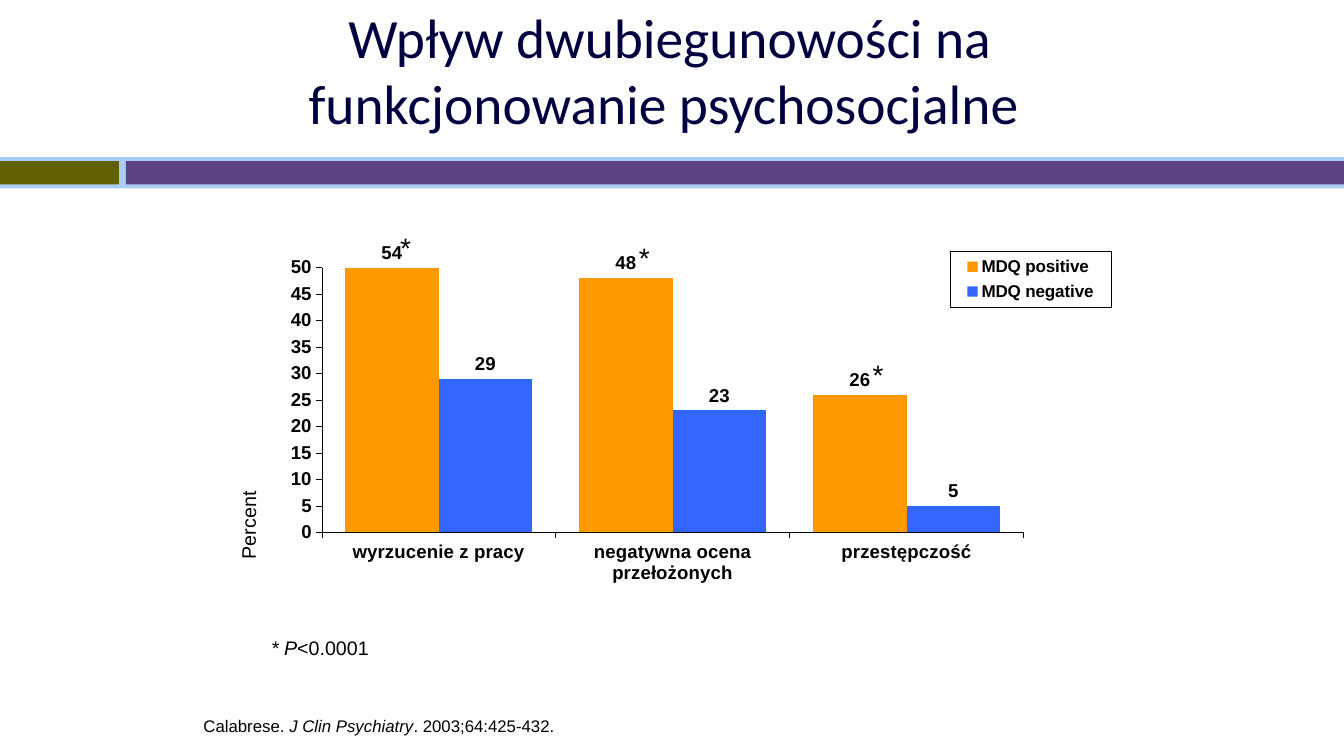
from typing import NamedTuple

from pptx import Presentation
from pptx.chart.data import CategoryChartData
from pptx.dml.color import RGBColor
from pptx.enum.chart import XL_CHART_TYPE as ChartType
from pptx.enum.chart import XL_LABEL_POSITION as LabelPosition
from pptx.enum.chart import XL_LEGEND_POSITION as LegendPosition
from pptx.enum.chart import XL_TICK_MARK as TickMark
from pptx.enum.shapes import MSO_SHAPE as Shape
from pptx.enum.text import MSO_ANCHOR as Anchor
from pptx.enum.text import PP_ALIGN as Align
from pptx.oxml import parse_xml
from pptx.oxml.ns import nsdecls
from pptx.util import Inches, Pt

COLUMNS, ROWS = 160, 90
CELL = Inches(1 / 12)

BLACK = RGBColor(0x00, 0x00, 0x00)
NAVY = RGBColor(0x00, 0x00, 0x40)
PALE_BLUE = RGBColor(0xAB, 0xCD, 0xF4)
OLIVE = RGBColor(0x60, 0x60, 0x00)
PURPLE = RGBColor(0x5C, 0x43, 0x81)
ORANGE = RGBColor(0xFF, 0x99, 0x00)
BLUE = RGBColor(0x33, 0x66, 0xFF)


class Box(NamedTuple):
    """A place on the slide, in grid columns and rows."""
    column: float
    row: float
    columns: float
    rows: float

    def emu(self) -> list[int]:
        return [round(cells * CELL) for cells in self]


class Band(NamedTuple):
    box: Box
    color: RGBColor


class Run(NamedTuple):
    text: str
    italic: bool = False


class Group(NamedTuple):
    name: str
    values: tuple[int, ...]
    color: RGBColor


BANDS = (
    Band(Box(0, 18.72, COLUMNS, 3.72), PALE_BLUE),
    Band(Box(0, 19.2, 14.16, 2.76), OLIVE),
    Band(Box(15, 19.2, COLUMNS - 15, 2.76), PURPLE),
)
OUTCOMES = ("wyrzucenie z pracy", "negatywna ocena przełożonych", "przestępczość")
GROUPS = (
    Group("MDQ positive", (54, 48, 26), ORANGE),
    Group("MDQ negative", (29, 23, 5), BLUE),
)
STAR_CORNERS = ((46.44, 26.88), (74.88, 28.08), (102.72, 42))


def add_band(slide, band: Band) -> None:
    bar = slide.shapes.add_shape(Shape.RECTANGLE, *band.box.emu())
    bar.shadow.inherit = False
    bar.fill.solid()
    bar.fill.fore_color.rgb = band.color
    bar.line.fill.background()


def add_text(slide, box: Box, *runs: Run, size: float = 14, font: str = "Arial",
             color: RGBColor = BLACK, align: Align = Align.LEFT,
             anchor: Anchor = Anchor.TOP, rotation: float = 0) -> None:
    holder = slide.shapes.add_textbox(*box.emu())
    holder.rotation = rotation
    frame = holder.text_frame
    frame.word_wrap = True
    frame.vertical_anchor = anchor
    paragraph = frame.paragraphs[0]
    paragraph.alignment = align
    for part in runs:
        run = paragraph.add_run()
        run.text = part.text
        run.font.italic = part.italic
        style_font(run.font, size, font, color)


def style_font(font, size: float, name: str = "Arial",
               color: RGBColor = BLACK, bold: bool = False) -> None:
    font.size = Pt(size)
    font.name = name
    font.bold = bold
    font.color.rgb = color


def manual_layout(x: float, y: float, w: float, h: float, inner: bool = False):
    """Chart layout element, in shares of the chart's size."""
    target = '<c:layoutTarget val="inner"/>' if inner else ""
    return parse_xml(
        f'<c:layout {nsdecls("c")}><c:manualLayout>{target}'
        '<c:xMode val="edge"/><c:yMode val="edge"/>'
        f'<c:x val="{x}"/><c:y val="{y}"/><c:w val="{w}"/><c:h val="{h}"/>'
        '</c:manualLayout></c:layout>')


def style_axis(axis) -> None:
    axis.has_major_gridlines = False
    axis.major_tick_mark = TickMark.OUTSIDE
    axis.minor_tick_mark = TickMark.NONE
    axis.format.line.color.rgb = BLACK
    axis.format.line.width = Pt(0.25)
    style_font(axis.tick_labels.font, 13.3, bold=True)


def place_chart_parts(chart) -> None:
    """Fix the plot area and legend, and frame the legend."""
    for empty in chart.element.xpath("//c:plotArea/c:layout | //c:legend/c:layout"):
        empty.getparent().remove(empty)
    plot_area, = chart.element.xpath("//c:plotArea")
    plot_area.insert(0, manual_layout(0.058, 0.073, 0.805, 0.63, inner=True))
    legend_side, = chart.element.xpath("//c:legend/c:legendPos")
    legend_side.addnext(manual_layout(0.779, 0.034, 0.184, 0.133))
    legend_text, = chart.element.xpath("//c:legend/c:txPr")
    legend_text.addprevious(parse_xml(
        f'<c:spPr {nsdecls("c", "a")}><a:noFill/><a:ln w="3175"><a:solidFill>'
        f'<a:srgbClr val="{BLACK}"/></a:solidFill></a:ln></c:spPr>'))


def add_outcome_chart(slide, box: Box) -> None:
    data = CategoryChartData()
    data.categories = OUTCOMES
    for group in GROUPS:
        data.add_series(group.name, group.values)
    chart = slide.shapes.add_chart(ChartType.COLUMN_CLUSTERED, *box.emu(), data).chart
    chart.has_title = False
    style_font(chart.font, 17.1, "Times New Roman", bold=True)

    style_axis(chart.category_axis)
    style_axis(chart.value_axis)
    chart.value_axis.minimum_scale = 0
    chart.value_axis.maximum_scale = 50
    chart.value_axis.major_unit = 5

    plot = chart.plots[0]
    plot.gap_width = 50
    plot.overlap = 0
    plot.vary_by_categories = False
    for group, series in zip(GROUPS, plot.series):
        series.invert_if_negative = False
        series.format.fill.solid()
        series.format.fill.fore_color.rgb = group.color
        labels = series.data_labels
        labels.show_value = True
        labels.position = LabelPosition.OUTSIDE_END
        style_font(labels.font, 13.3, bold=True)

    chart.has_legend = True
    chart.legend.position = LegendPosition.RIGHT
    chart.legend.include_in_layout = False
    style_font(chart.legend.font, 12.2, bold=True)
    place_chart_parts(chart)


def main() -> None:
    deck = Presentation()
    deck.slide_width, deck.slide_height = COLUMNS * CELL, ROWS * CELL
    slide = deck.slides.add_slide(deck.slide_layouts[6])

    for band in BANDS:
        add_band(slide, band)
    add_text(slide, Box(24.48, 3.48, 110.52, 9.48),
             Run("Wpływ dwubiegunowości na funkcjonowanie psychosocjalne "),
             size=39.6, font="Calibri", color=NAVY,
             align=Align.CENTER, anchor=Anchor.MIDDLE)
    add_outcome_chart(slide, Box(32.28, 28.2, 103.8, 50.04))
    add_text(slide, Box(23.04, 84.6, 65.52, 3.6), Run("Calabrese. "),
             Run("J Clin Psychiatry", italic=True), Run(". 2003;64:425-432."), size=12)
    add_text(slide, Box(9.36, 45.48, 40.56, 3.96), Run("Percent"), rotation=270.4)
    add_text(slide, Box(31.08, 75.12, 22.2, 3.96),
             Run("* P", italic=True), Run("<0.0001"))
    for column, row in STAR_CORNERS:
        add_text(slide, Box(column, row, 4.92, 5.16), Run("*"), size=20)

    deck.save("out.pptx")


if __name__ == "__main__":
    main()
